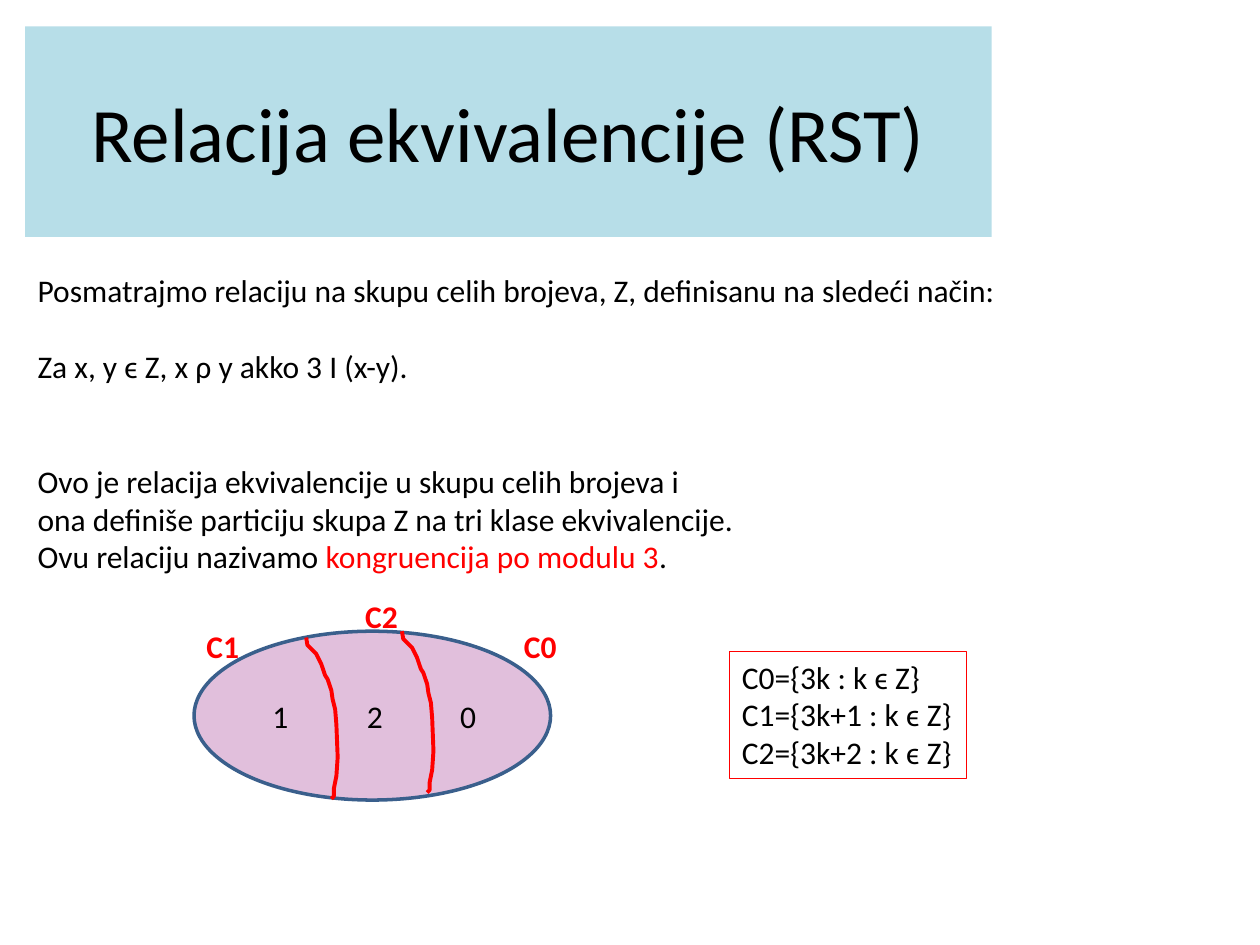
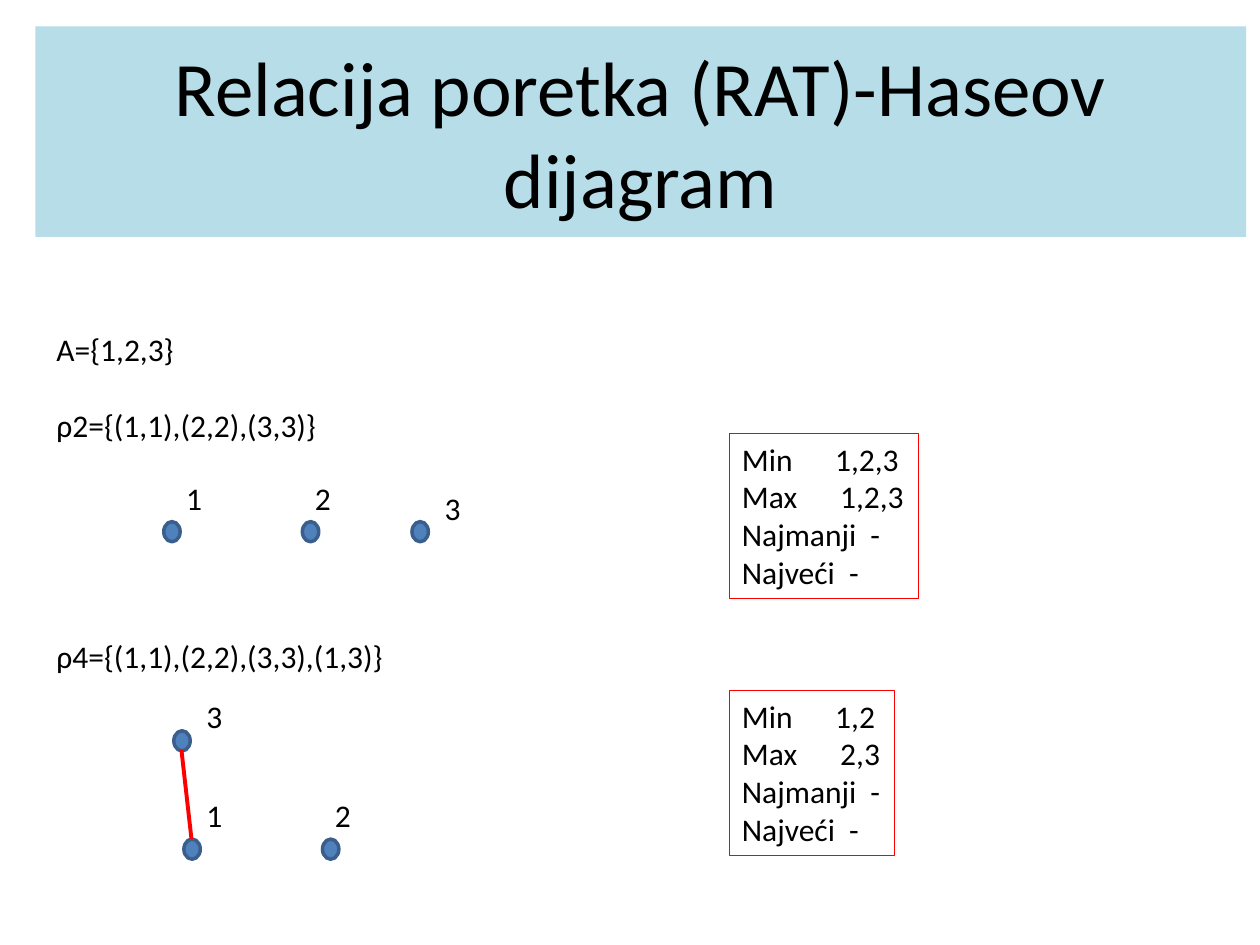
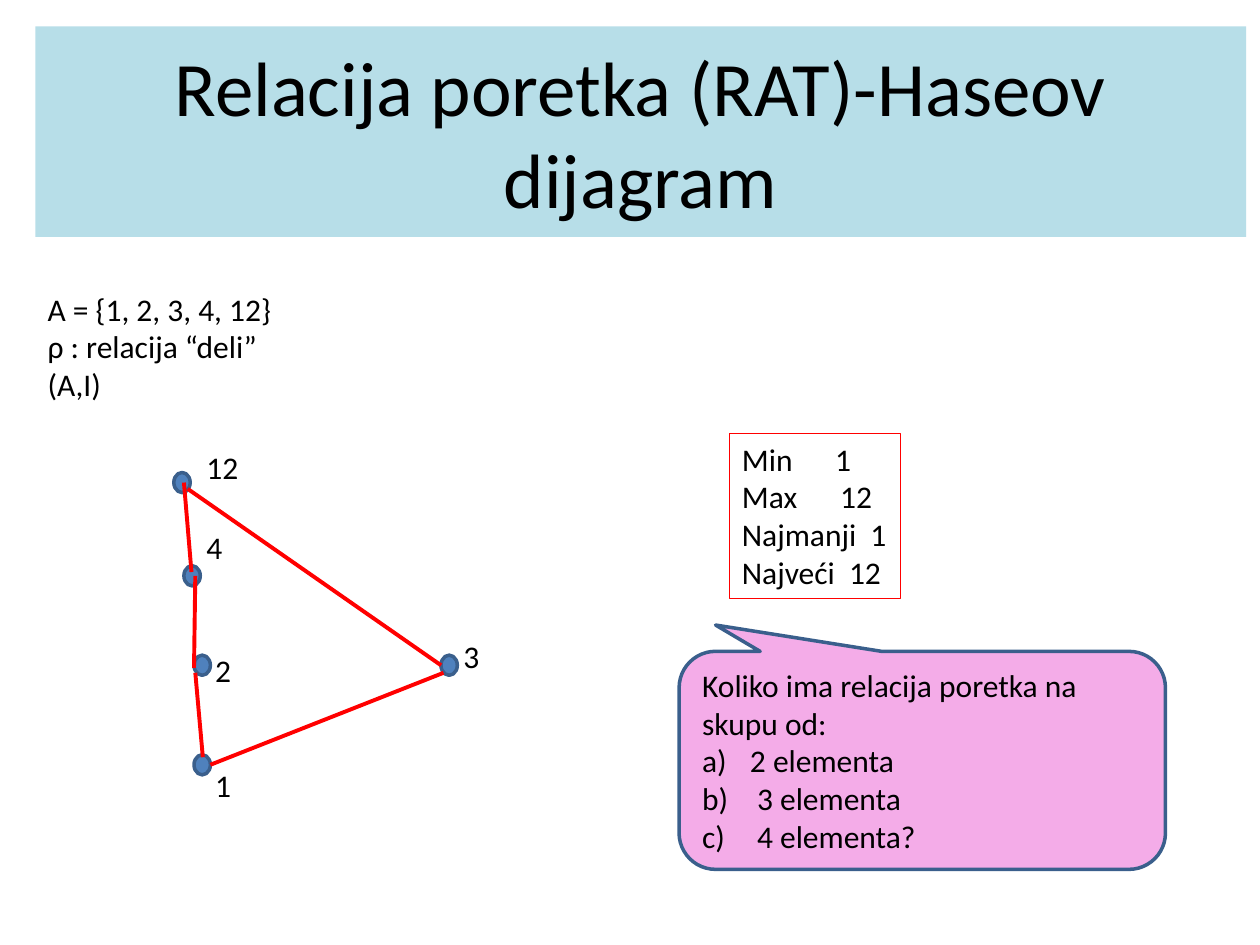
from lxml import etree
from pptx import Presentation
from pptx.dml.color import RGBColor
from pptx.enum.shapes import MSO_CONNECTOR, MSO_SHAPE
from pptx.enum.text import MSO_ANCHOR, MSO_AUTO_SIZE, PP_ALIGN
from pptx.oxml.ns import qn
from pptx.util import Inches, Pt

RECT, OVAL = MSO_SHAPE.RECTANGLE, MSO_SHAPE.OVAL
CALLOUT = MSO_SHAPE.ROUNDED_RECTANGULAR_CALLOUT
STRAIGHT = MSO_CONNECTOR.STRAIGHT
TOP, MIDDLE = MSO_ANCHOR.TOP, MSO_ANCHOR.MIDDLE
LEFT, CENTER = PP_ALIGN.LEFT, PP_ALIGN.CENTER

FONT = "Calibri"
BLACK, RED, BAND = "000000", "FF0000", "B7DEE8"
BLUE, OUTLINE, LILAC, PINK = "4F81BD", "3A5F8C", "E1BFDC", "F4ACE8"
SIZE, LINE_PT = 18, 22
LABEL_H = 0.4
DOT_W, DOT_H = 0.13, 0.16
BOX_X = 5.79

# A paragraph is its text, or (text or runs, empty lines above it).
CONGRUENCE = [
    "Posmatrajmo relaciju na skupu celih brojeva, Z, definisanu na sledeći način:",
    ("Za x, y ϵ Z, x ρ y akko 3 I (x-y).", 1),
    ("Ovo je relacija ekvivalencije u skupu celih brojeva i", 2),
    "ona definiše particiju skupa Z na tri klase ekvivalencije.",
    ([("Ovu relaciju nazivamo ", BLACK), ("kongruencija po modulu 3", RED),
      (".", BLACK)], 0),
]
CLASSES = ["C0={3k : k ϵ Z}", "C1={3k+1 : k ϵ Z}", "C2={3k+2 : k ϵ Z}"]
CLASS_LABELS = [("C1", 1.54, 4.93), ("C2", 2.8, 4.69), ("C0", 4.06, 4.93)]
CLASS_TABS = [0.11, 0.86, 1.6]
CUT = [(0, 0), (0.01, 0.06), (0.04, 0.09), (0.08, 0.13), (0.1, 0.17),
       (0.12, 0.21), (0.15, 0.3), (0.17, 0.33), (0.2, 0.42), (0.21, 0.49),
       (0.23, 0.57), (0.24, 0.69), (0.25, 0.95), (0.24, 1.1), (0.22, 1.2),
       (0.22, 1.26), (0.2, 1.28)]
CUT_STARTS = [(2.43, 5.06), (3.19, 5.01)]

ORDER_TITLE = "Relacija poretka (RAT)-Haseov dijagram"
RELATIONS = ["A={1,2,3}", ("ρ2={(1,1),(2,2),(3,3)}", 1),
             ("ρ4={(1,1),(2,2),(3,3),(1,3)}", 5)]
DIVIDES = ["A = {1, 2, 3, 4, 12}", "ρ : relacija “deli”", "(A,I)"]
EXTREMES = {"Min": 0.74, "Max": 0.78, "Najmanji": 1.02, "Najveći": 0.85}
QUESTION = "Koliko ima relacija poretka na skupu od:"
CHOICES = ["2 elementa", " 3 elementa", " 4 elementa?"]

# Nodes: label, dot left and top, label left and top. Edges: from, to.
RHO2_NODES = [("1", 1.3, 4.14, 1.38, 3.75), ("2", 2.4, 4.14, 2.4, 3.75),
              ("3", 3.27, 4.14, 3.43, 3.83)]
RHO4_NODES = [("1", 1.46, 6.66, 1.54, 6.27), ("2", 2.56, 6.66, 2.56, 6.27),
              ("3", 1.38, 5.8, 1.54, 5.48)]
RHO4_EDGES = [(1.52, 6.66, 1.44, 5.95)]
DIVIDES_NODES = [("2", 1.54, 5.2, 1.61, 5.12), ("4", 1.46, 4.49, 1.54, 4.14),
                 ("3", 3.5, 5.2, 3.58, 5.01), ("1", 1.54, 5.99, 1.61, 6.03),
                 ("12", 1.38, 3.75, 1.54, 3.51)]
DIVIDES_EDGES = [(1.61, 6.01, 1.55, 5.34), (1.54, 5.3, 1.55, 4.57),
                 (1.67, 6.07, 3.52, 5.34), (1.52, 4.54, 1.46, 3.83),
                 (3.5, 5.28, 1.49, 3.88)]


def rgb(value):
    return RGBColor.from_string(value)


def style(shape, fill=None, line=None, width=2):
    shape.shadow.inherit = False
    if fill:
        shape.fill.solid()
        shape.fill.fore_color.rgb = rgb(fill)
    else:
        shape.fill.background()
    if line:
        shape.line.color.rgb = rgb(line)
        shape.line.width = Pt(width)
    else:
        shape.line.fill.background()


def write(shape, paragraphs, size=SIZE, color=BLACK, bold=False, align=LEFT,
          anchor=TOP):
    tf = shape.text_frame
    tf.word_wrap = True
    tf.auto_size = MSO_AUTO_SIZE.NONE
    tf.vertical_anchor = anchor
    for i, item in enumerate(paragraphs):
        content, gap = item if isinstance(item, tuple) else (item, 0)
        runs = [(content, color)] if isinstance(content, str) else content
        p = tf.paragraphs[0] if i == 0 else tf.add_paragraph()
        p.alignment = align
        if gap:
            p.space_before = Pt(gap * LINE_PT)
        for text, tint in runs:
            r = p.add_run()
            r.text = text
            r.font.name, r.font.size, r.font.bold = FONT, Pt(size), bold
            r.font.color.rgb = rgb(tint)
    return tf


def add_shape(s, kind, x, y, w, h, **look):
    sp = s.shapes.add_shape(kind, Inches(x), Inches(y), Inches(w), Inches(h))
    style(sp, **look)
    return sp


def add_text(s, paragraphs, x, y, w, h, **fmt):
    sp = s.shapes.add_textbox(Inches(x), Inches(y), Inches(w), Inches(h))
    write(sp, paragraphs, **fmt).margin_right = 0


def set_tabs(p, stops):
    tabs = etree.SubElement(p._p.get_or_add_pPr(), qn("a:tabLst"))
    for stop in stops:
        etree.SubElement(tabs, qn("a:tab"), pos=str(Inches(stop)), algn="l")


def add_slide(prs, title, x, w):
    s = prs.slides.add_slide(prs.slide_layouts[5])
    sp = s.shapes.title
    sp.left, sp.top, sp.width, sp.height = map(Inches, (x, 0.21, w, 1.67))
    sp.fill.solid()
    sp.fill.fore_color.rgb = rgb(BAND)
    write(sp, [title], size=44, align=CENTER, anchor=MIDDLE)
    return s


def add_red_box(s, paragraphs, y, w, h):
    sp = add_shape(s, RECT, BOX_X, y, w, h, line=RED, width=0.75)
    tf = write(sp, paragraphs)
    tf.margin_right = 0
    return tf


def add_extremes(s, values, y, w):
    rows = [f"{name}\t{value}" for name, value in zip(EXTREMES, values)]
    tf = add_red_box(s, rows, y, w, 1.31)
    for p, stop in zip(tf.paragraphs, EXTREMES.values()):
        set_tabs(p, [stop])


def add_hasse(s, nodes, edges=()):
    for label, x, y, label_x, label_y in nodes:
        add_shape(s, OVAL, x, y, DOT_W, DOT_H, fill=BLUE, line=OUTLINE)
        add_text(s, [label], label_x, label_y, 0.2 + 0.13 * len(label), LABEL_H)
    for edge in edges:
        line = s.shapes.add_connector(STRAIGHT, *map(Inches, edge))
        line.line.color.rgb = rgb(RED)
        line.line.width = Pt(2.25)
        etree.SubElement(line._element.spPr, qn("a:effectLst"))


def add_cut(s, x, y):
    points = [(Inches(x + dx), Inches(y + dy)) for dx, dy in CUT]
    builder = s.shapes.build_freeform(*points[0], scale=1.0)
    builder.add_line_segments(points[1:], close=False)
    style(builder.convert_to_shape(), line=RED, width=2.25)


def add_question(s):
    sp = add_shape(s, CALLOUT, 5.39, 5.17, 3.86, 1.73, fill=PINK, line=OUTLINE)
    for i, value in enumerate((-0.425, -0.621, 0.167)):
        sp.adjustments[i] = value
    tf = write(sp, [QUESTION] + CHOICES, anchor=MIDDLE)
    for p in tf.paragraphs[1:]:
        pPr = p._p.get_or_add_pPr()
        pPr.set("marL", str(Inches(0.38)))
        pPr.set("indent", str(-Inches(0.38)))
        etree.SubElement(pPr, qn("a:buFont"), typeface="+mj-lt")
        etree.SubElement(pPr, qn("a:buAutoNum"), type="alphaLcParenR")


def equivalence_slide(prs):
    s = add_slide(prs, "Relacija ekvivalencije (RST)", 0.2, 7.67)
    add_text(s, CONGRUENCE, 0.2, 2.1, 7.89, 4.64)
    partition = add_shape(s, OVAL, 1.54, 5.01, 2.83, 1.34, fill=LILAC, line=OUTLINE)
    tf = write(partition, ["\t1\t2\t0"], anchor=MIDDLE)
    set_tabs(tf.paragraphs[0], CLASS_TABS)
    for x, y in CUT_STARTS:
        add_cut(s, x, y)
    for label, x, y in CLASS_LABELS:
        add_text(s, [label], x, y, 0.46, LABEL_H, color=RED, bold=True)
    add_red_box(s, CLASSES, 5.17, 1.88, 1.01)


def small_orders_slide(prs):
    s = add_slide(prs, ORDER_TITLE, 0.28, 9.61)
    add_text(s, RELATIONS, 0.35, 2.57, 4.24, 4.64)
    add_hasse(s, RHO2_NODES)
    add_hasse(s, RHO4_NODES, RHO4_EDGES)
    add_extremes(s, ["1,2,3", "1,2,3", "-", "-"], 3.44, 1.5)
    add_extremes(s, ["1,2", "2,3", "-", "-"], 5.48, 1.31)


def divisibility_slide(prs):
    s = add_slide(prs, ORDER_TITLE, 0.28, 9.61)
    add_text(s, DIVIDES, 0.28, 2.25, 3.23, 1.1)
    add_hasse(s, DIVIDES_NODES, DIVIDES_EDGES)
    add_extremes(s, ["1", "12", "1", "12"], 3.44, 1.36)
    add_question(s)


def main():
    prs = Presentation()
    prs.slide_width, prs.slide_height = Inches(10), Inches(7.5)
    equivalence_slide(prs)
    small_orders_slide(prs)
    divisibility_slide(prs)
    prs.save("out.pptx")


if __name__ == "__main__":
    main()
